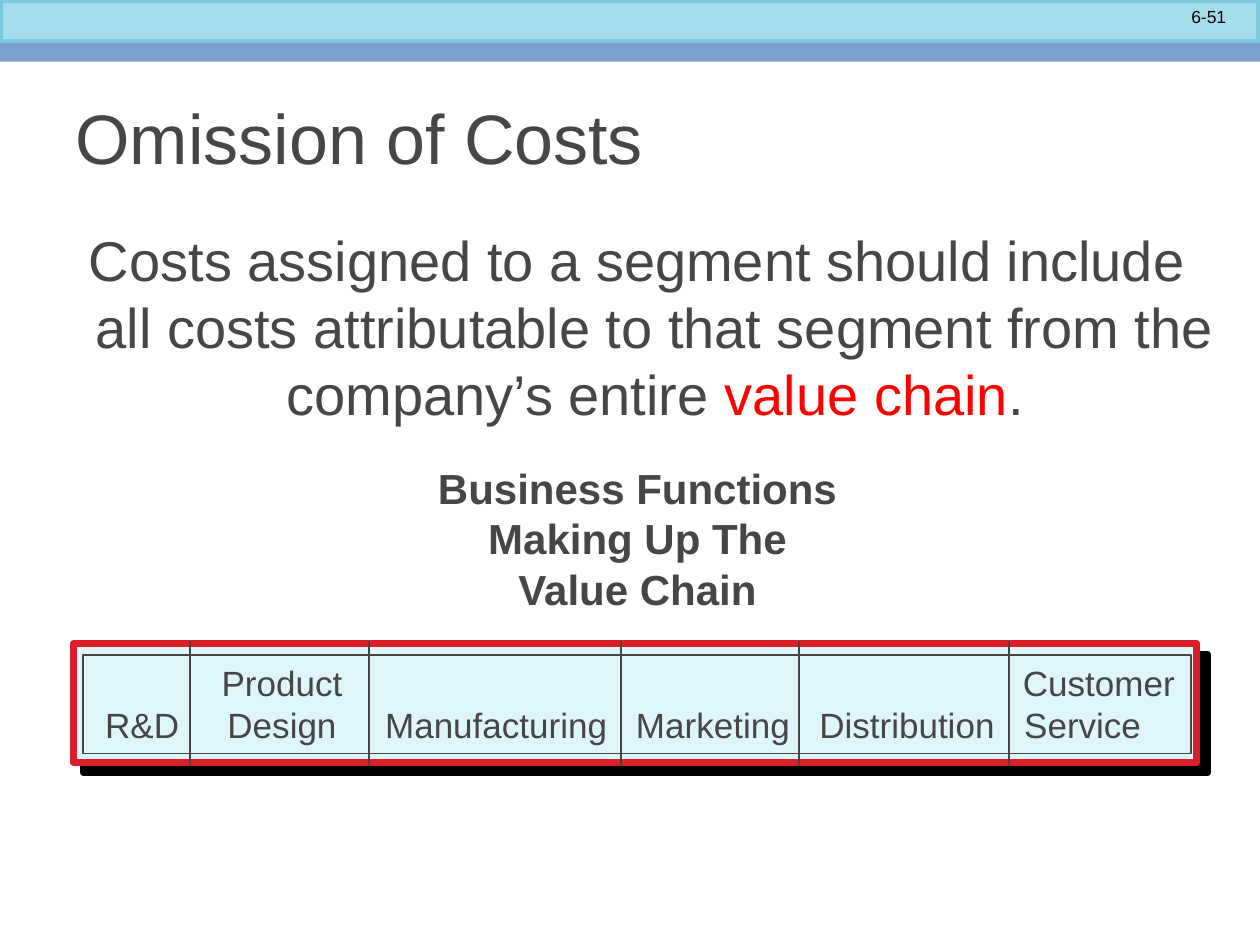
from lxml import etree
from pptx import Presentation
from pptx.dml.color import RGBColor
from pptx.enum import shapes, text
from pptx.oxml import ns
from pptx.util import Inches, Pt

AQUA = RGBColor(0xA6, 0xDD, 0xEA)
AQUA_EDGE = RGBColor(0x7A, 0xCB, 0xE0)
BLUE = RGBColor(0x7D, 0xA0, 0xD0)
PALE = RGBColor(0xDE, 0xF5, 0xFA)
CRIMSON = RGBColor(0xDA, 0x1F, 0x28)
RED = RGBColor(0xFF, 0, 0)
GREY = RGBColor(0x46, 0x46, 0x46)
BLACK = RGBColor(0, 0, 0)

DIVIDERS = (1.51, 2.93, 4.93, 6.34, 8.01)
FUNCTION_ROWS = (
    ("\tProduct\tCustomer", ((1.48, "ctr"), (7.36, "l"))),
    ("\tR&D\tDesign\tManufacturing\tMarketing\tDistribution\tService",
     ((0.37, "ctr"), (1.48, "ctr"), (3.18, "ctr"), (4.9, "ctr"), (6.44, "ctr"), (7.37, "l"))),
)


def place(sp, left, top, width, height):
    """Move and size a shape, in inches."""
    sp.left, sp.top = Inches(left), Inches(top)
    sp.width, sp.height = Inches(width), Inches(height)


def write(sp, paragraphs, size, color=GREY, bold=False, align=text.PP_ALIGN.LEFT,
          anchor=text.MSO_ANCHOR.TOP, wrap=True):
    """Fill a shape with paragraphs, each a list of (words, colour or None) runs."""
    tf = sp.text_frame
    tf.word_wrap = wrap
    tf.vertical_anchor = anchor
    for i, runs in enumerate(paragraphs):
        p = tf.paragraphs[0] if i == 0 else tf.add_paragraph()
        p.alignment = align
        for words, tint in runs:
            r = p.add_run()
            r.text = words
            r.font.name, r.font.size, r.font.bold = "Arial", Pt(size), bold
            r.font.color.rgb = tint or color
    return tf


def add_text(slide, box, paragraphs, size, **style):
    """Add a text box and write into it."""
    sp = slide.shapes.add_textbox(*map(Inches, box))
    return write(sp, paragraphs, size, **style)


def add_rect(slide, box, fill, line=None, width=1):
    """Add a flat rectangle with an optional outline."""
    sp = slide.shapes.add_shape(shapes.MSO_SHAPE.RECTANGLE, *map(Inches, box))
    sp.shadow.inherit = False
    sp.fill.solid()
    sp.fill.fore_color.rgb = fill
    if line is None:
        sp.line.fill.background()
    else:
        sp.line.color.rgb = line
        sp.line.width = Pt(width)
    return sp


def add_hard_shadow(sp):
    """Give a shape a solid black shadow to the lower right."""
    effects = sp._element.spPr.find(ns.qn("a:effectLst"))
    shadow = etree.SubElement(effects, ns.qn("a:outerShdw"), dist=str(Pt(8.5)),
                              dir="2700000", algn="ctr", rotWithShape="0")
    etree.SubElement(shadow, ns.qn("a:srgbClr"), val=str(BLACK))


def add_divider(slide, x):
    """Add a vertical line across the value chain."""
    line = slide.shapes.add_connector(shapes.MSO_CONNECTOR.STRAIGHT, Inches(x), Inches(5.09),
                                      Inches(x), Inches(6.08))
    line.line.color.rgb = GREY
    line.line.width = Pt(1)
    etree.SubElement(line._element.spPr, ns.qn("a:effectLst"))


def set_tabs(p, stops):
    """Set the tab stops of a paragraph."""
    tabs = etree.SubElement(p._p.get_or_add_pPr(), ns.qn("a:tabLst"))
    for pos, algn in stops:
        etree.SubElement(tabs, ns.qn("a:tab"), pos=str(Inches(pos)), algn=algn)


def add_header(slide):
    """Add the bands at the top and the page number."""
    add_rect(slide, (0, 0, 10, 0.34), AQUA, AQUA_EDGE, 4)
    add_rect(slide, (0, 0.4, 10, 0.09), BLUE)
    add_rect(slide, (0, 0.34, 10, 0.1), BLUE)
    add_text(slide, (8.5, 0, 1.33, 0.27), [[("6-51", None)]], 10, color=BLACK,
             align=text.PP_ALIGN.RIGHT)


def add_statement(slide):
    """Add the main sentence with its hanging indent."""
    runs = [("Costs assigned to a segment should include all costs attributable to that "
             "segment from the company’s entire ", None), ("value chain", RED), (".", None)]
    tf = add_text(slide, (0.25, 1.74, 9.5, 2.34), [runs], 32, align=text.PP_ALIGN.CENTER)
    p = tf.paragraphs[0]
    p.space_before = Pt(3)
    pPr = p._p.get_or_add_pPr()
    pPr.set("marL", str(Inches(0.4)))
    pPr.set("indent", str(Inches(-0.28)))


def add_value_chain(slide):
    """Add the framed row of business functions."""
    add_hard_shadow(add_rect(slide, (0.58, 5.11, 8.92, 0.94), PALE, CRIMSON, 4))
    sp = add_rect(slide, (0.66, 5.2, 8.79, 0.78), PALE, GREY)
    tf = write(sp, [[(words, None)] for words, _ in FUNCTION_ROWS], 20)
    tf.margin_right = 0
    for p, (_, stops) in zip(tf.paragraphs, FUNCTION_ROWS):
        set_tabs(p, stops)
    for x in DIVIDERS:
        add_divider(slide, x)


def main():
    """Build the slide and save it."""
    prs = Presentation()
    prs.slide_width, prs.slide_height = Inches(10), Inches(7.5)
    slide = prs.slides.add_slide(prs.slide_layouts[5])
    add_header(slide)
    title = slide.shapes.title
    place(title, 0.5, 0.5, 9, 1.17)
    write(title, [[("Omission of Costs", None)]], 40, anchor=text.MSO_ANCHOR.MIDDLE)
    add_statement(slide)
    add_value_chain(slide)
    heading = ("Business Functions", "Making Up The", "Value Chain")
    add_text(slide, (3.36, 3.62, 3.4, 1.31), [[(words, None)] for words in heading], 24,
             bold=True, align=text.PP_ALIGN.CENTER, wrap=False)
    prs.save("out.pptx")


if __name__ == "__main__":
    main()
